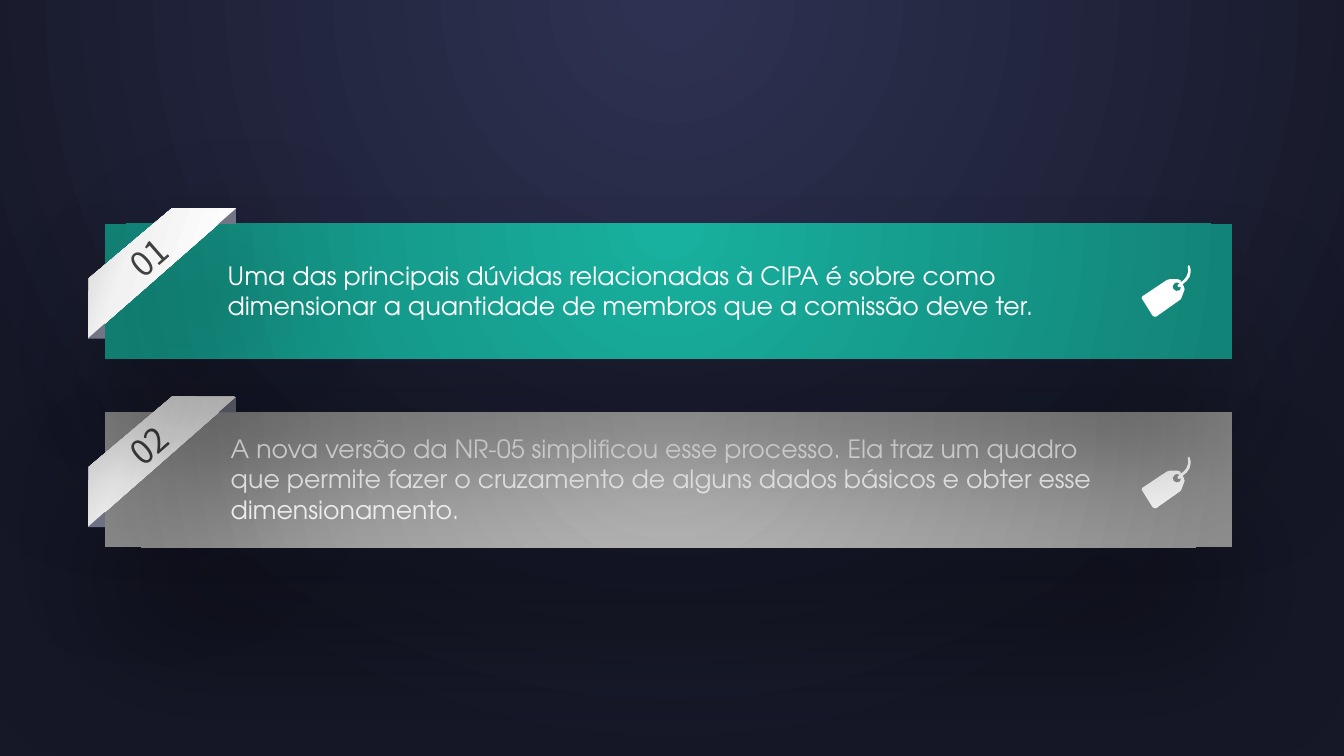
from dataclasses import dataclass

from lxml.etree import SubElement
from pptx import Presentation
from pptx.dml.color import RGBColor
from pptx.enum.shapes import MSO_SHAPE
from pptx.enum.text import MSO_ANCHOR, MSO_AUTO_SIZE, PP_ALIGN
from pptx.oxml.ns import qn
from pptx.shapes.autoshape import Shape
from pptx.slide import Slide
from pptx.util import Inches, Pt

Stops = tuple[tuple[int, str], ...]
Box = tuple[float, float, float, float]


@dataclass(frozen=True)
class Theme:
    background: Stops = ((2, "2E3252"), (100, "161828"))
    teal: Stops = ((2, "18B09E"), (100, "128477"))
    grey: Stops = ((2, "BFBFBF"), (100, "8F8F8F"))
    ribbon: Stops = ((0, "BFBFBF"), (42, "F2F2F2"), (84, "FFFFFF"))
    fold: str = "727586"
    white: str = "FFFFFF"
    number: str = "404040"
    shadow: str = "000000"
    number_font: str = "Noto Sans CJK SC"
    body_font: str = "TeX Gyre Adventor"
    number_size: int = 24
    body_size: int = 18


@dataclass(frozen=True)
class Banner:
    number: str
    text: str
    top: float
    stops: Stops
    text_box: Box
    icon_top: float


THEME = Theme()
BANNERS = (
    Banner("01", "Uma das principais dúvidas relacionadas à CIPA é sobre como "
           "dimensionar a quantidade de membros que a comissão deve ter.",
           2.22, THEME.teal, (2.16, 2.53, 8.65, 0.71), 2.63),
    Banner("02", "A nova versão da NR-05 simplificou esse processo. Ela traz um quadro "
           "que permite fazer o cruzamento de alguns dados básicos e obter esse "
           "dimensionamento.",
           4.09, THEME.grey, (2.19, 4.25, 9.14, 1.01), 4.53),
)
RIBBON = ((0, 0.45), (0.39, 0), (1.47, 0), (1.95, 0.41))
TAG_SIZE = (51, 52)  # hundredths of an inch
TAG_OUTLINE = (
    "M 48,1 C 48,1 48,0 47,0 C 46,1 46,2 46,2 C 48,9 43,15 39,17 L 39,15 "
    "C 38,15 37,14 36,14 L 28,14 C 27,14 26,14 25,15 L 1,31 C 0,32 0,34 1,34 "
    "L 11,50 C 12,52 14,51 15,51 L 39,34 C 39,34 40,32 40,32 L 43,24 "
    "C 43,23 43,22 42,21 L 41,19 C 47,15 51,9 48,1 Z "
    "M 38,25 C 36,26 33,26 32,24 C 30,22 31,20 33,18 C 34,17 36,17 38,18 L 37,19 "
    "C 37,19 35,20 36,21 C 36,22 37,22 37,22 L 38,22 C 39,22 39,22 39,21 "
    "C 39,23 39,24 38,25 Z"
)
PATH_TAGS = {"M": "a:moveTo", "L": "a:lnTo", "C": "a:cubicBezTo", "Z": "a:close"}


def add_element(parent, tag: str, **attributes: object):
    return SubElement(parent, qn(tag), {key: str(value) for key, value in attributes.items()})


def write_gradient(gradient, stops: Stops, angle: int | None = None) -> None:
    """Fill a gradFill element: linear with an angle, else circular from above."""
    for child in list(gradient):
        gradient.remove(child)
    stop_list = add_element(gradient, "a:gsLst")
    for position, color in stops:
        stop = add_element(stop_list, "a:gs", pos=position * 1000)
        add_element(stop, "a:srgbClr", val=color)
    if angle is None:
        circle = add_element(gradient, "a:path", path="circle")
        add_element(circle, "a:fillToRect", l=50000, t=-80000, r=50000, b=180000)
    else:
        add_element(gradient, "a:lin", ang=angle * 60000, scaled=0)


def fill_gradient(shape: Shape, stops: Stops, angle: int | None = None) -> None:
    shape.line.fill.background()
    shape.fill.gradient()
    write_gradient(shape.element.spPr.find(qn("a:gradFill")), stops, angle)


def fill_solid(shape: Shape, color: str) -> None:
    shape.shadow.inherit = False
    shape.line.fill.background()
    shape.fill.solid()
    shape.fill.fore_color.rgb = RGBColor.from_string(color)


def cast_shadow(shape: Shape, distance: int, direction: int) -> None:
    shape.shadow.inherit = False
    effects = shape.element.spPr.find(qn("a:effectLst"))
    shadow = add_element(effects, "a:outerShdw", blurRad=Pt(100), dist=Pt(distance),
                         dir=direction * 60000, algn="t", rotWithShape=0)
    color = add_element(shadow, "a:srgbClr", val=THEME.shadow)
    add_element(color, "a:alpha", val=40000)


def add_preset(slide: Slide, kind: MSO_SHAPE, box: Box) -> Shape:
    return slide.shapes.add_shape(kind, *(Inches(length) for length in box))


def add_polygon(slide: Slide, left: float, top: float,
                points: tuple[tuple[float, float], ...]) -> Shape:
    corners = [(Inches(left + x), Inches(top + y)) for x, y in points]
    builder = slide.shapes.build_freeform(*corners[0])
    builder.add_line_segments(corners[1:], close=True)
    return builder.convert_to_shape()


def add_text(slide: Slide, box: Box, text: str, font: str, size: int, color: str) -> Shape:
    shape = slide.shapes.add_textbox(*(Inches(length) for length in box))
    frame = shape.text_frame
    frame.word_wrap = True
    frame.auto_size = MSO_AUTO_SIZE.SHAPE_TO_FIT_TEXT
    paragraph = frame.paragraphs[0]
    paragraph.text = text
    paragraph.font.name = font
    paragraph.font.size = Pt(size)
    paragraph.font.color.rgb = RGBColor.from_string(color)
    return shape


def add_ribbon(slide: Slide, banner: Banner) -> None:
    """Draw the folded corner ribbon with its slanted number."""
    ribbon = add_polygon(slide, 0.5, banner.top + 0.11, RIBBON)
    ribbon.rotation = 319.9
    fill_gradient(ribbon, THEME.ribbon, angle=60)
    cast_shadow(ribbon, distance=46, direction=45)
    for left, offset in ((0.87, 0.99), (2.17, -0.15)):
        fold = add_preset(slide, MSO_SHAPE.RIGHT_TRIANGLE,
                          (left, banner.top + offset, 0.17, 0.15))
        fold.element.spPr.find(qn("a:xfrm")).set("flipH", "1")
        fill_solid(fold, THEME.fold)
    label = add_text(slide, (0.7, banner.top + 0.08, 1.55, 0.5), banner.number,
                     THEME.number_font, THEME.number_size, THEME.number)
    label.rotation = 318.8
    label.text_frame.vertical_anchor = MSO_ANCHOR.MIDDLE
    label.text_frame.paragraphs[0].alignment = PP_ALIGN.CENTER


def add_tag_icon(slide: Slide, left: float, top: float) -> None:
    """Draw the price tag, with curves in place of the polygon's straight edges."""
    width, height = TAG_SIZE
    right, bottom = width / 100, height / 100
    icon = add_polygon(slide, left, top, ((0, 0), (right, 0), (right, bottom), (0, bottom)))
    outline = next(icon.element.iter(qn("a:path")))
    for child in list(outline):
        outline.remove(child)
    outline.set("w", str(width))
    outline.set("h", str(height))
    for token in TAG_OUTLINE.split():
        if token in PATH_TAGS:
            segment = add_element(outline, PATH_TAGS[token])
        else:
            x, y = token.split(",")
            add_element(segment, "a:pt", x=x, y=y)
    fill_solid(icon, THEME.white)


def add_banner(slide: Slide, banner: Banner) -> None:
    bar = add_preset(slide, MSO_SHAPE.RECTANGLE, (1.04, banner.top, 11.18, 1.34))
    fill_gradient(bar, banner.stops)
    cast_shadow(bar, distance=71, direction=90)
    add_ribbon(slide, banner)
    add_tag_icon(slide, 11.32, banner.icon_top)
    add_text(slide, banner.text_box, banner.text,
             THEME.body_font, THEME.body_size, THEME.white)


def main() -> None:
    presentation = Presentation()
    presentation.slide_width = Inches(13.33)
    presentation.slide_height = Inches(7.5)
    slide = presentation.slides.add_slide(presentation.slide_layouts[6])
    slide.background.fill.gradient()
    write_gradient(next(slide.element.iter(qn("a:gradFill"))), THEME.background)
    # The upper banner comes last so that its shadow falls on the lower one.
    for banner in reversed(BANNERS):
        add_banner(slide, banner)
    presentation.save("out.pptx")


if __name__ == "__main__":
    main()
